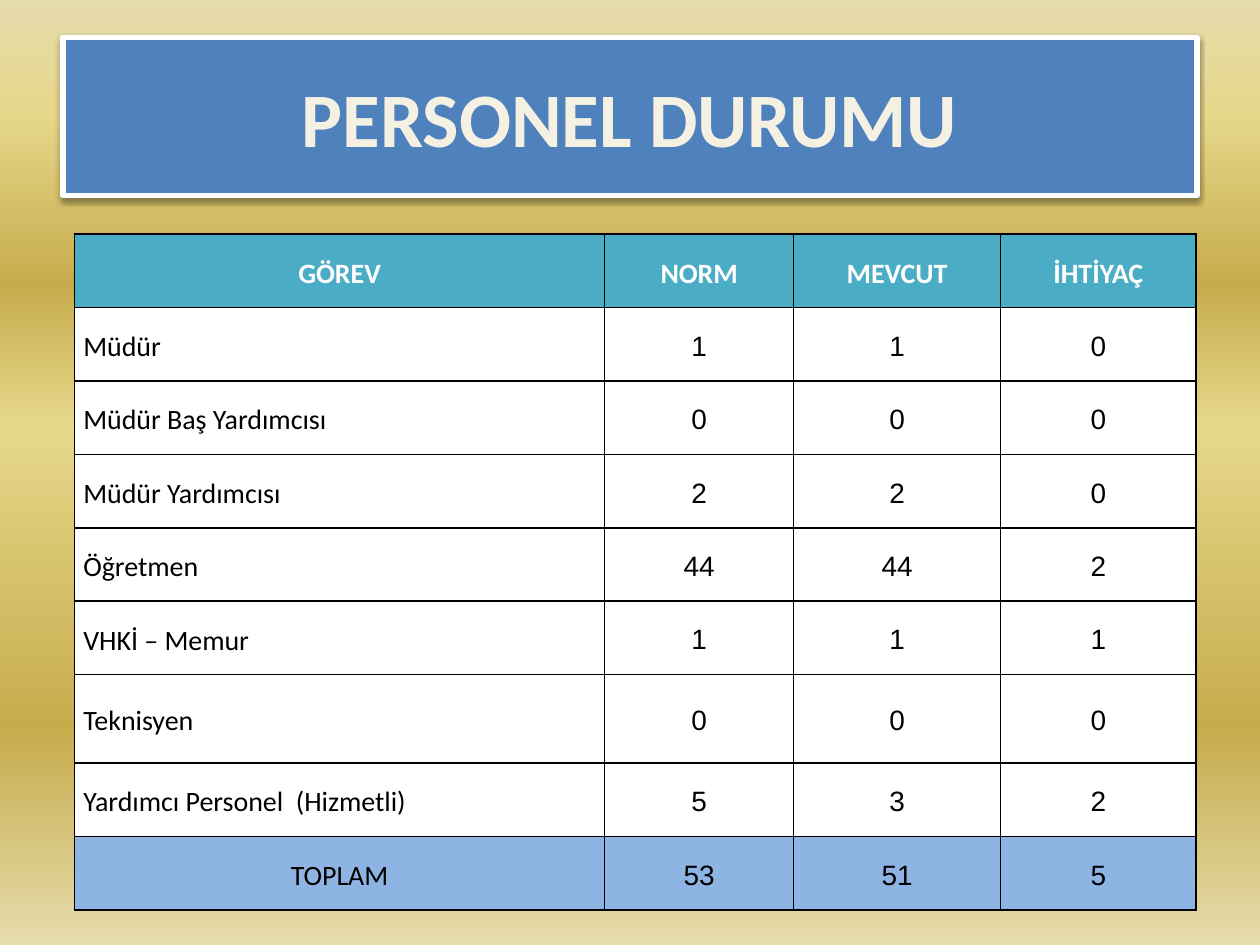
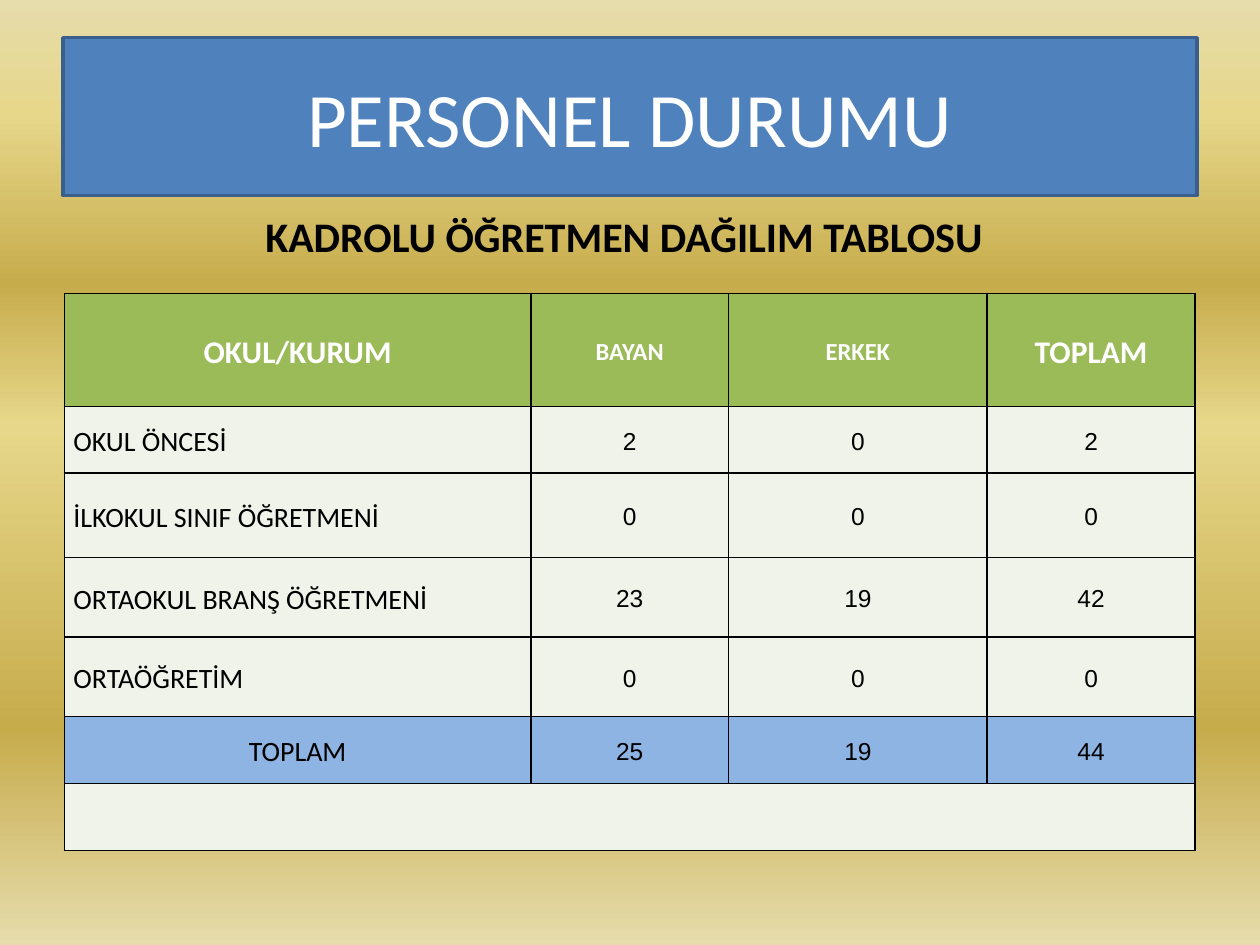
from lxml import etree
from pptx import Presentation
from pptx.dml.color import RGBColor
from pptx.enum.shapes import MSO_SHAPE
from pptx.enum.text import MSO_ANCHOR as ANCHOR, MSO_AUTO_SIZE as AUTO, PP_ALIGN as AL
from pptx.oxml.ns import qn
from pptx.util import Cm, Pt

BLACK, WHITE = "000000", "FFFFFF"
TITLE_FILL, TOTAL_FILL = "4F81BD", "8EB4E3"
GOLD_STOPS = [(0, "E6DCAC"), (12, "E6D78A"), (30, "C7AC4C"),
              (45, "E6D78A"), (77, "C7AC4C"), (100, "E6DCAC")]
TITLE_BOX = (1.27, 0.76, 22.86, 3.18)
CELL_FORMAT = dict(margin_left=Cm(0.18), margin_right=Cm(0.18), margin_top=0,
                   margin_bottom=0, vertical_anchor=ANCHOR.MIDDLE)

STAFF = [
    ("GÖREV", "NORM", "MEVCUT", "İHTİYAÇ"),
    ("Müdür", 1, 1, 0),
    ("Müdür Baş Yardımcısı", 0, 0, 0),
    ("Müdür Yardımcısı", 2, 2, 0),
    ("Öğretmen", 44, 44, 2),
    ("VHKİ – Memur", 1, 1, 1),
    ("Teknisyen", 0, 0, 0),
    ("Yardımcı Personel  (Hizmetli)", 5, 3, 2),
    ("TOPLAM", 53, 51, 5),
]
TEACHERS = [
    ("OKUL/KURUM", "BAYAN", "ERKEK", "TOPLAM"),
    ("OKUL ÖNCESİ", 2, 0, 2),
    ("İLKOKUL SINIF ÖĞRETMENİ", 0, 0, 0),
    ("ORTAOKUL BRANŞ ÖĞRETMENİ", 23, 19, 42),
    ("ORTAÖĞRETİM", 0, 0, 0),
    ("TOPLAM", 25, 19, 44),
    (),
]


def rgb(value):
    return RGBColor.from_string(value)


def apply(obj, values):
    for name, value in values.items():
        setattr(obj, name, value)


def fill_solid(obj, color):
    obj.fill.solid()
    obj.fill.fore_color.rgb = rgb(color)


def add_color(parent, color, alpha=None):
    clr = etree.SubElement(parent, qn("a:srgbClr"), val=color)
    if alpha is not None:
        etree.SubElement(clr, qn("a:alpha"), val=str(alpha * 1000))


def write(tf, text, size, color, font="Calibri", bold=False, align=AL.LEFT, spacing=None):
    p = tf.paragraphs[0]
    apply(p, dict(alignment=align, line_spacing=spacing))
    r = p.add_run()
    r.text = str(text)
    apply(r.font, dict(name=font, size=Pt(size), bold=bold))
    r.font.color.rgb = rgb(color)


def add_slide(prs):
    """Add a blank slide with the gold gradient background."""
    s = prs.slides.add_slide(prs.slide_layouts[6])
    fill = s.background.fill
    fill.gradient()
    fill.gradient_angle = 270
    stops = next(s.element.iter(qn("a:gsLst")))
    for stop in list(stops):
        stops.remove(stop)
    for pos, color in GOLD_STOPS:
        add_color(etree.SubElement(stops, qn("a:gs"), pos=str(pos * 1000)), color)
    return s


def add_title(s, box, color, line, line_width, bold=False):
    sp = s.shapes.add_shape(MSO_SHAPE.RECTANGLE, *map(Cm, box))
    sp.shadow.inherit = False
    fill_solid(sp, TITLE_FILL)
    sp.line.color.rgb = rgb(line)
    sp.line.width = Pt(line_width)
    apply(sp.text_frame, dict(word_wrap=True, vertical_anchor=ANCHOR.MIDDLE))
    write(sp.text_frame, "PERSONEL DURUMU", 44, color, bold=bold, align=AL.CENTER)
    return sp


def add_shadow(sp):
    effects = sp.element.spPr.find(qn("a:effectLst"))
    shadow = etree.SubElement(effects, qn("a:outerShdw"), blurRad=str(Pt(3.1)),
                              dist=str(Pt(1.6)), dir="5400000", rotWithShape="0")
    add_color(shadow, BLACK, 38)


def add_subtitle(s, box, text):
    tf = s.shapes.add_textbox(*map(Cm, box)).text_frame
    apply(tf, dict(word_wrap=False, auto_size=AUTO.NONE))
    write(tf, text, 24, BLACK, bold=True)


def add_borders(cell):
    tc_pr = cell._tc.get_or_add_tcPr()
    for i, side in enumerate("LRTB"):
        ln = etree.Element(qn(f"a:ln{side}"), w=str(Pt(1)))
        add_color(etree.SubElement(ln, qn("a:solidFill")), BLACK)
        tc_pr.insert(i, ln)


def add_staff_table(s, left, top, widths, heights, rows, head_fill, body_fill,
                    head_sizes, number_size):
    """Draw a header row, body rows and a TOPLAM row; an empty row is merged across."""
    frame = s.shapes.add_table(len(rows), len(widths), Cm(left), Cm(top),
                               Cm(sum(widths)), Cm(sum(heights)))
    table = frame.table
    for column, width in zip(table.columns, widths):
        column.width = Cm(width)
    for i, (row, height) in enumerate(zip(rows, heights)):
        table.rows[i].height = Cm(height)
        is_total = bool(row) and row[0] == "TOPLAM"
        fill = head_fill if i == 0 else TOTAL_FILL if is_total else body_fill
        for j in range(len(widths)):
            cell = table.cell(i, j)
            apply(cell, CELL_FORMAT)
            fill_solid(cell, fill)
            add_borders(cell)
            if not row:
                continue
            if i == 0:
                style = dict(size=head_sizes[j], color=WHITE, bold=True, align=AL.CENTER)
            elif j == 0:
                style = dict(size=16, color=BLACK, align=AL.CENTER if is_total else AL.LEFT)
            else:
                style = dict(size=number_size, color=BLACK, font="Arial", align=AL.CENTER)
            write(cell.text_frame, row[j], spacing=1.15, **style)
        if not row:
            table.cell(i, 0).merge(table.cell(i, len(widths) - 1))


def build_staff_slide(prs):
    s = add_slide(prs)
    add_shadow(add_title(s, TITLE_BOX, "F4F1E3", WHITE, 3, bold=True))
    add_staff_table(s, 1.5, 4.72, (10.69, 3.81, 4.17, 3.94), [1.48] * 6 + [1.78] + [1.48] * 2,
                    STAFF, "4BACC6", WHITE, [16] * 4, 16)


def build_teacher_slide(prs):
    s = add_slide(prs)
    add_title(s, TITLE_BOX, WHITE, "3A5F8C", 2)
    add_staff_table(s, 1.3, 5.92, (9.4, 3.99, 5.21, 4.19), (2.27, 1.35, 1.7, 1.6, 1.6, 1.35, 1.35),
                    TEACHERS, "9BBB59", "EFF3EA", (18, 14, 14, 18), 14)
    add_subtitle(s, (5.1, 4.11, 15.11, 2.06), "KADROLU ÖĞRETMEN DAĞILIM TABLOSU")


def main():
    prs = Presentation()
    apply(prs, dict(slide_width=Cm(25.4), slide_height=Cm(19.05)))
    build_staff_slide(prs)
    build_teacher_slide(prs)
    prs.save("out.pptx")


if __name__ == "__main__":
    main()
